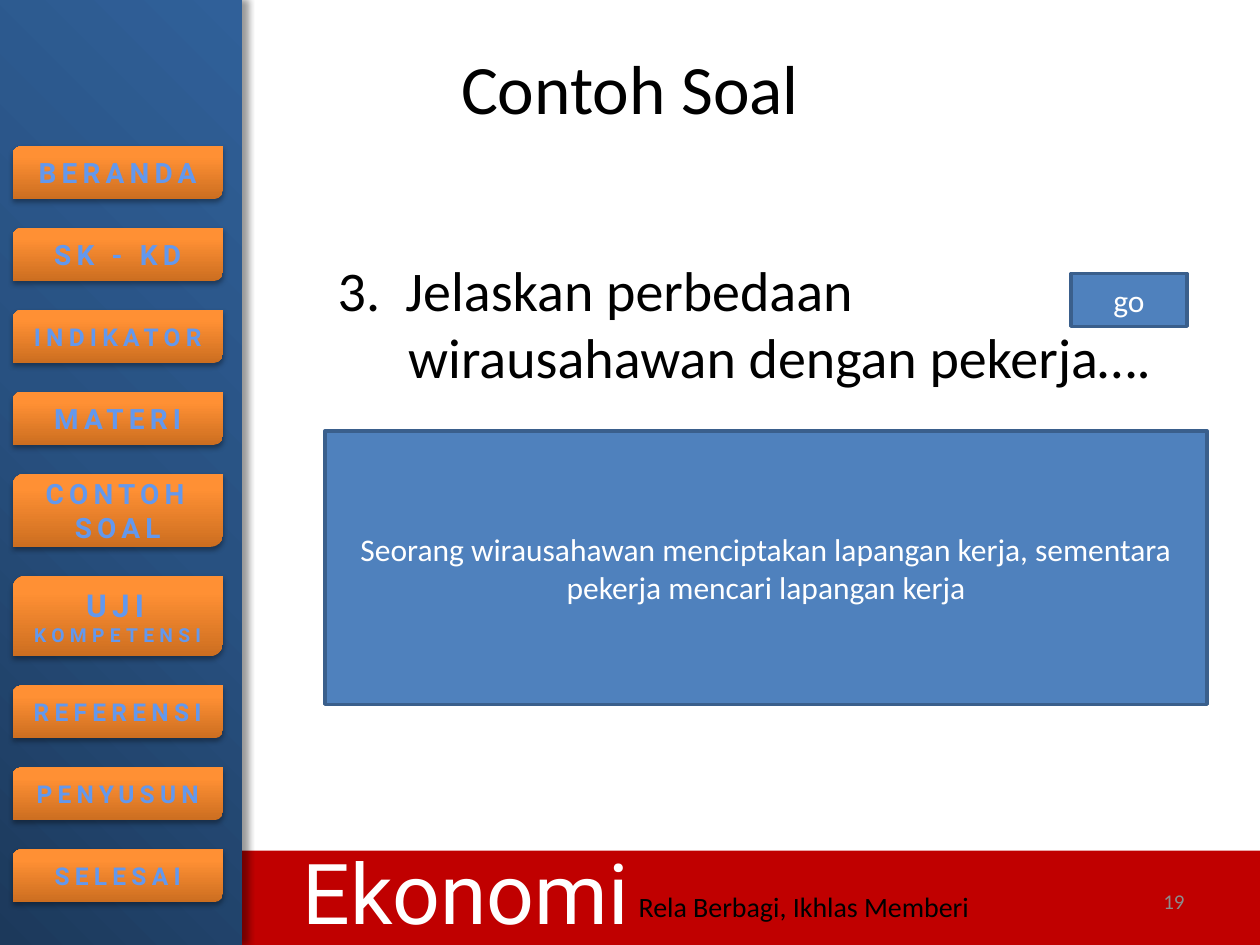
from lxml import etree
from pptx import Presentation
from pptx import util as u
from pptx.dml import color as dml
from pptx.enum import shapes, text
from pptx.oxml import ns

COLORS = {"red": "C00000", "blue": "4F81BD", "edge": "3A5F8C", "menu": "6398ED",
          "white": "FFFFFF", "black": "000000", "gray": "8C8C8C"}
SIDEBAR_STOPS = [(0, "1C395B"), (50, "285181"), (100, "306099")]
BUTTON_STOPS = [(0, "CC6E20"), (80, "FF9034"), (100, "FF9136")]
SIDEBAR_PATH = '<a:path path="circle"><a:fillToRect t="100000" r="100000"/></a:path>'
BUTTON_PATH = '<a:lin ang="16200000" scaled="0"/>'

MENU = [
    (0.42, [("BERANDA", 16)]),
    (0.42, [("SK - KD", 16)]),
    (0.42, [("INDIKATOR", 14)]),
    (0.42, [("MATERI", 16)]),
    (0.58, [("CONTOH SOAL", 16)]),
    (0.64, [("UJI", 18), (" KOMPETENSI", 11)]),
    (0.42, [("REFERENSI", 14)]),
    (0.42, [("PENYUSUN", 14)]),
    (0.42, [("SELESAI", 14)]),
]
MENU_LEFT, MENU_TOP, MENU_WIDTH, MENU_GAP = 0.1, 1.16, 1.67, 0.23
TITLE = "Contoh Soal"
QUESTION = "3.  Jelaskan perbedaan wirausahawan dengan pekerja…."
PANELS = [
    ((8.5, 2.17, 0.92, 0.42), "go"),
    ((2.58, 3.42, 7, 2.17),
     "Seorang wirausahawan menciptakan lapangan kerja, sementara pekerja mencari lapangan kerja"),
]
LABELS = [
    ((2.27, 6.62, 2.85, 0.91), "Ekonomi",
     dict(size=48, font="Roboto", color="white", align="CENTER", wrap=False)),
    ((4.97, 7.01, 3.09, 0.37), "Rela Berbagi, Ikhlas Memberi",
     dict(size=16, align="LEFT", wrap=False)),
    ((7.17, 6.95, 2.33, 0.4), "19",
     dict(size=12, color="gray", align="RIGHT", anchor="MIDDLE")),
]


def rgb(name):
    return dml.RGBColor.from_string(COLORS[name])


def place(shape, box):
    shape.left, shape.top, shape.width, shape.height = map(u.Inches, box)


def write(shape, runs, size=18, font="Calibri", color="black", bold=False,
          align="CENTER", anchor="TOP", wrap=True, spacing=0):
    frame = shape.text_frame
    frame.auto_size = text.MSO_AUTO_SIZE.NONE
    frame.word_wrap = wrap
    frame.vertical_anchor = getattr(text.MSO_ANCHOR, anchor)
    paragraph = frame.paragraphs[0]
    paragraph.alignment = getattr(text.PP_ALIGN, align)
    for content, points in [(runs, size)] if isinstance(runs, str) else runs:
        run = paragraph.add_run()
        run.text = content
        run.font.size = u.Pt(points)
        run.font.name = font
        run.font.bold = bold
        run.font.color.rgb = rgb(color)
        if spacing:
            run.font._element.set("spc", str(spacing * 100))
    return paragraph


def add_block(slide, box, kind="RECTANGLE", fill="blue", edge=None):
    shape = slide.shapes.add_shape(getattr(shapes.MSO_SHAPE, kind), *map(u.Inches, box))
    shape.shadow.inherit = False
    shape.fill.solid()
    shape.fill.fore_color.rgb = rgb(fill)
    if edge:
        shape.line.color.rgb = rgb(edge)
        shape.line.width = u.Pt(2)
    else:
        shape.line.fill.background()
    return shape


def shade(shape, stops, direction, blur, distance, angle, opacity):
    namespace = ns.nsdecls("a")
    stop_xml = "".join(f'<a:gs pos="{position * 1000}"><a:srgbClr val="{value}"/></a:gs>'
                       for position, value in stops)
    gradient = etree.fromstring(
        f'<a:gradFill {namespace} rotWithShape="1"><a:gsLst>{stop_xml}</a:gsLst>{direction}</a:gradFill>')
    shadow = etree.fromstring(
        f'<a:outerShdw {namespace} blurRad="{u.Pt(blur)}" dist="{u.Pt(distance)}" '
        f'dir="{angle * 60000}" rotWithShape="0"><a:srgbClr val="000000">'
        f'<a:alpha val="{opacity * 1000}"/></a:srgbClr></a:outerShdw>')
    properties = shape._element.spPr
    properties.replace(properties.find(ns.qn("a:solidFill")), gradient)
    properties.find(ns.qn("a:effectLst")).append(shadow)


def add_menu(slide):
    top = MENU_TOP
    for height, runs in MENU:
        button = add_block(slide, (MENU_LEFT, top, MENU_WIDTH, height), "ROUND_2_DIAG_RECTANGLE")
        shade(button, BUTTON_STOPS, BUTTON_PATH, 3.1, 1.8, 90, 35)
        write(button, runs, font="Roboto", color="menu", bold=True, anchor="MIDDLE", spacing=3)
        top += height + MENU_GAP


def main():
    presentation = Presentation()
    presentation.slide_width, presentation.slide_height = u.Inches(10), u.Inches(7.5)
    slide = presentation.slides.add_slide(presentation.slide_layouts[1])

    add_block(slide, (0, 6.75, 10, 0.75), fill="red")
    sidebar = add_block(slide, (0, 0, 1.92, 7.5))
    shade(sidebar, SIDEBAR_STOPS, SIDEBAR_PATH, 4, 3, 0, 40)
    add_menu(slide)

    title, body = slide.placeholders
    place(title, (0.5, 0.3, 9, 0.78))
    write(title, TITLE, size=39.6, anchor="MIDDLE")
    place(body, (2.58, 1.98, 6.92, 4.35))
    question = write(body, QUESTION, size=32, align="LEFT")
    question.space_before = u.Pt(0)
    properties = question._p.get_or_add_pPr()
    properties.set("marL", str(u.Inches(0.56)))
    properties.set("indent", str(u.Inches(-0.56)))
    etree.SubElement(properties, ns.qn("a:buNone"))

    for box, content, style in LABELS:
        write(slide.shapes.add_textbox(*map(u.Inches, box)), content, **style)
    for box, content in PANELS:
        write(add_block(slide, box, edge="edge"), content, color="white", anchor="MIDDLE")

    presentation.save("out.pptx")


if __name__ == "__main__":
    main()
